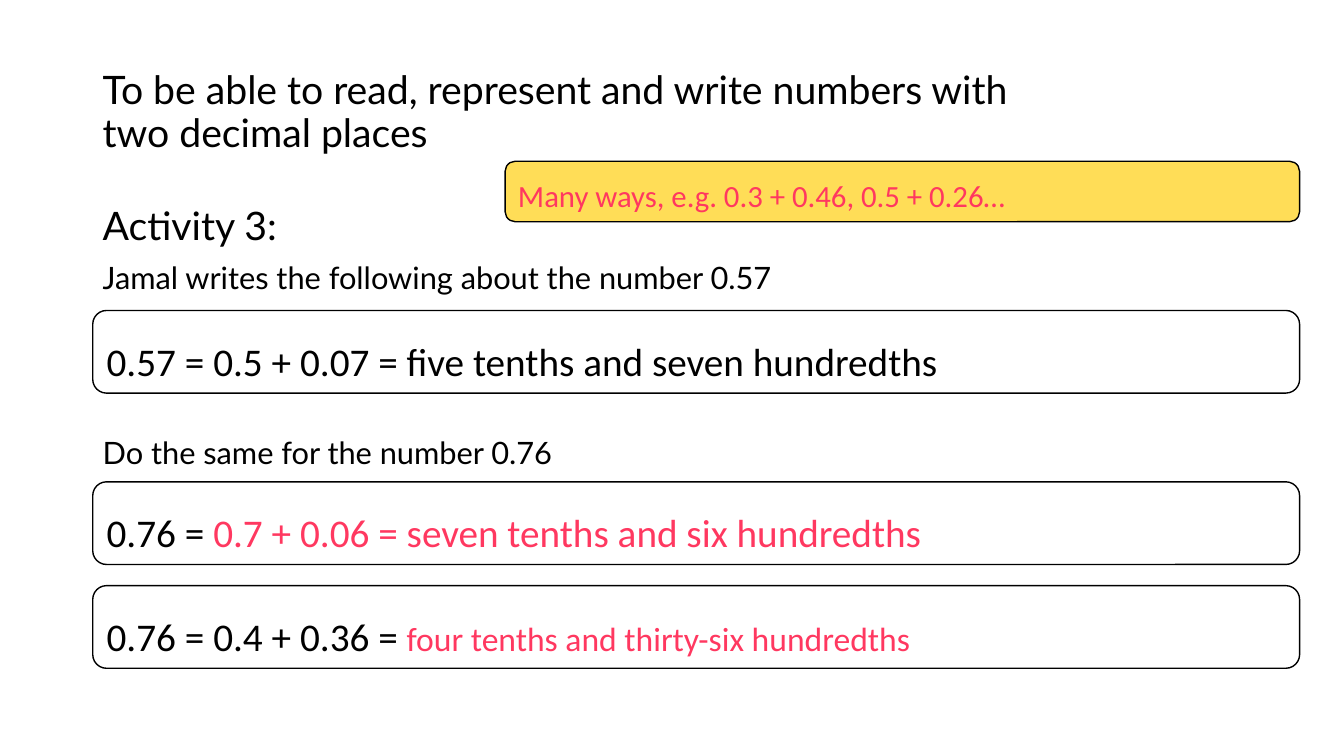
import pptx
import pptx.util
import pptx.dml.color
import pptx.enum.shapes
import pptx.enum.text
from dataclasses import dataclass

Inches, Pt = pptx.util.Inches, pptx.util.Pt
ANCHOR = pptx.enum.text.MSO_ANCHOR


@dataclass(frozen=True)
class Theme:
    ink: str = "000000"
    answer: str = "FF3860"
    paper: str = "FFFFFF"
    highlight: str = "FFDD57"
    prose_font: str = "Lato"
    sum_font: str = "Calibri"
    large: int = 28
    medium: int = 24
    small: int = 22


THEME = Theme()

# A run is (text, size, colour); a paragraph is (runs, space before in points).
OBJECTIVE = [([("To be able to read, represent and write numbers with two decimal places",
                THEME.large, THEME.ink)], 0)]
ACTIVITY = [
    ([("Activity 3:", THEME.large, THEME.ink)], 0),
    ([("Jamal writes the following about the number 0.57", THEME.small, THEME.ink)], 10),
    ([("Do the same for the number 0.76", THEME.small, THEME.ink)], 101),
]
SUMS = [
    (3.08, [("0.57 = 0.5 + 0.07 = five tenths and seven hundredths", THEME.large, THEME.ink)]),
    (4.78, [("0.76 = ", THEME.large, THEME.ink),
            ("0.7 + 0.06 = seven tenths and six hundredths", THEME.large, THEME.answer)]),
    (5.81, [("0.76 = 0.4 + 0.36 = ", THEME.large, THEME.ink),
            ("four tenths and thirty-six hundredths", THEME.medium, THEME.answer)]),
]
HINT = [("Many ways, e.g. 0.3 + 0.46, 0.5 + 0.26…", THEME.small, THEME.answer)]

LEFT, RIGHT = 0.92, 12.89
SUM_HEIGHT = 0.82
HINT_LEFT, HINT_TOP, HINT_HEIGHT = 5.01, 1.6, 0.6


def rgb(colour):
    return pptx.dml.color.RGBColor.from_string(colour)


def write(frame, paragraphs, *, font, line_spacing, anchor):
    frame.word_wrap = True
    frame.vertical_anchor = anchor
    for index, (runs, space_before) in enumerate(paragraphs):
        paragraph = frame.add_paragraph() if index else frame.paragraphs[0]
        paragraph.alignment = pptx.enum.text.PP_ALIGN.LEFT
        paragraph.line_spacing = line_spacing
        paragraph.space_before = Pt(space_before)
        for text, size, colour in runs:
            run = paragraph.add_run()
            run.text = text
            run.font.name = font
            run.font.size = Pt(size)
            run.font.color.rgb = rgb(colour)


def add_prose(slide, paragraphs, top, width, height, anchor):
    prose = slide.shapes.add_textbox(Inches(LEFT), Inches(top), Inches(width), Inches(height))
    write(prose.text_frame, paragraphs, font=THEME.prose_font, line_spacing=0.9, anchor=anchor)


def add_panel(slide, runs, left, top, height, fill):
    """Draw a rounded panel that reaches the common right edge."""
    panel = slide.shapes.add_shape(
        pptx.enum.shapes.MSO_SHAPE.ROUNDED_RECTANGLE,
        Inches(left), Inches(top), Inches(RIGHT - left), Inches(height))
    panel.shadow.inherit = False
    panel.fill.solid()
    panel.fill.fore_color.rgb = rgb(fill)
    panel.line.color.rgb = rgb(THEME.ink)
    panel.line.width = Pt(1)
    write(panel.text_frame, [(runs, 0)], font=THEME.sum_font, line_spacing=1.5,
          anchor=ANCHOR.BOTTOM)


def main():
    deck = pptx.Presentation()
    deck.slide_width, deck.slide_height = Inches(13.33), Inches(7.5)
    slide = deck.slides.add_slide(deck.slide_layouts[6])
    add_prose(slide, OBJECTIVE, 0.4, 9.6, 1.45, ANCHOR.MIDDLE)
    add_prose(slide, ACTIVITY, 2, 11.5, 4.76, ANCHOR.TOP)
    for top, runs in SUMS:
        add_panel(slide, runs, LEFT, top, SUM_HEIGHT, THEME.paper)
    add_panel(slide, HINT, HINT_LEFT, HINT_TOP, HINT_HEIGHT, THEME.highlight)
    deck.save("out.pptx")


if __name__ == "__main__":
    main()
